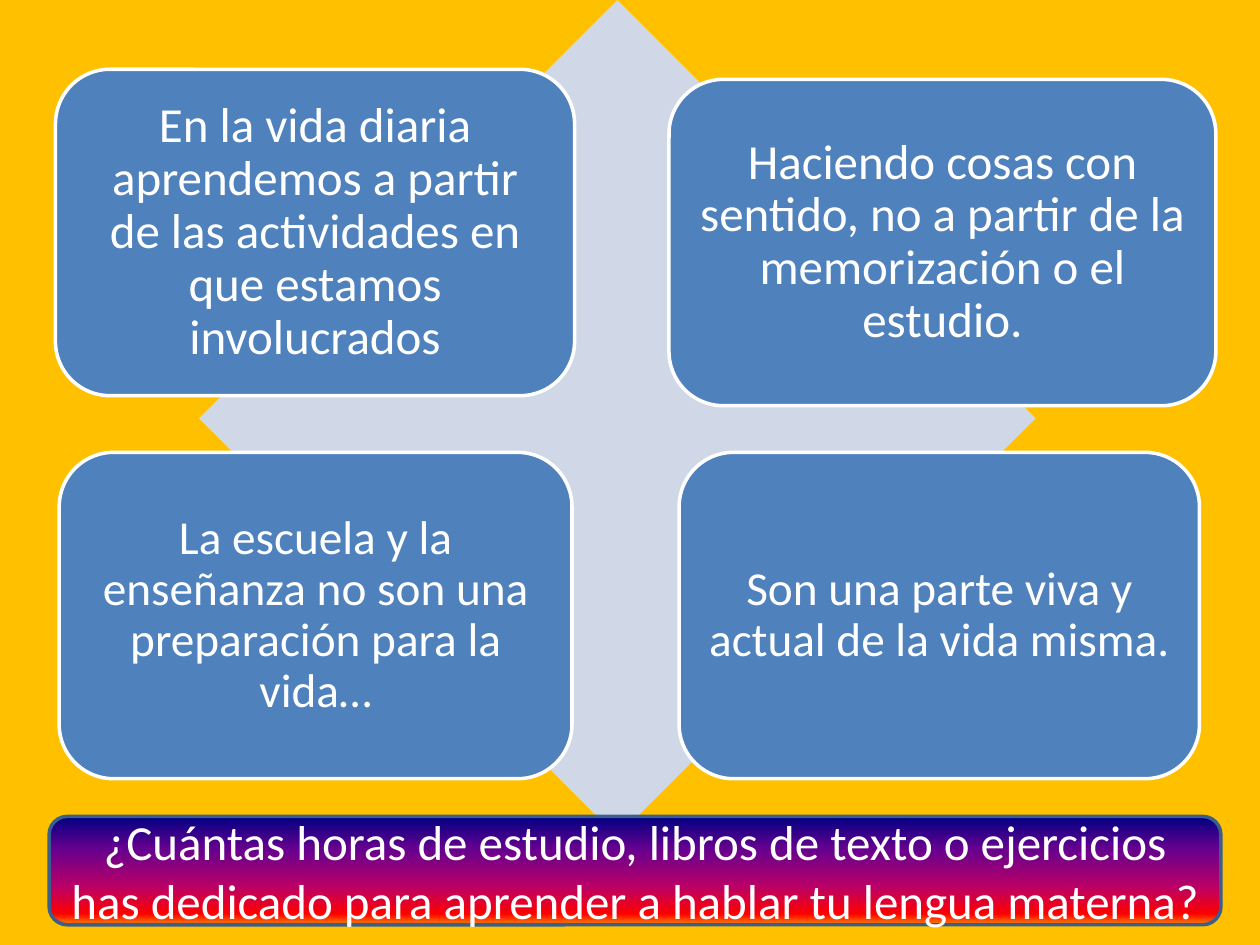
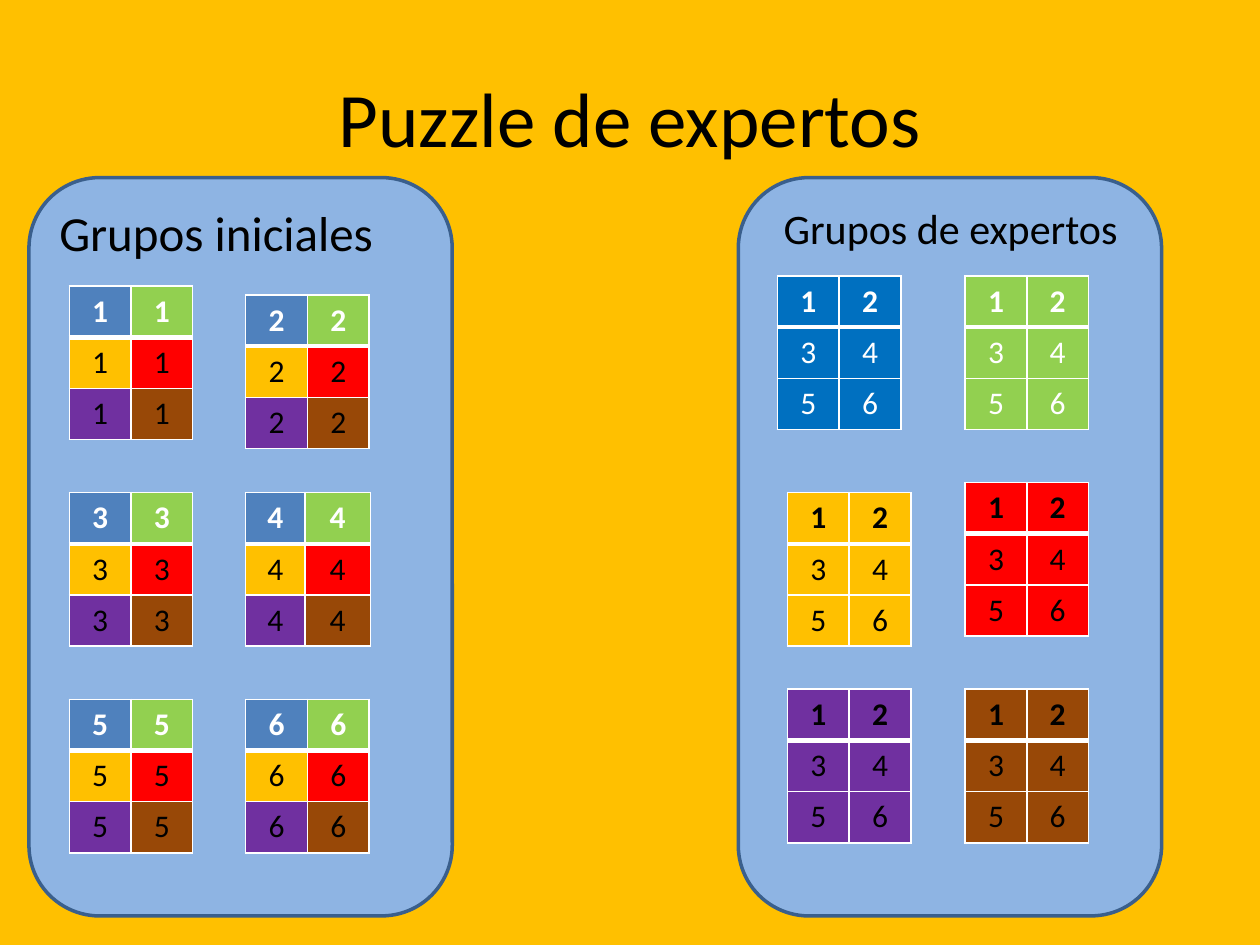
from lxml import etree
from pptx import Presentation
from pptx import util as u
from pptx.dml.color import RGBColor
from pptx.enum import shapes, text
from pptx.oxml import ns

FONT = "Calibri"
COLORS = {
    "background": "FFC000",
    "diamond": "D0D8E8",
    "card": "4F81BD",
    "panel": "8EB4E3",
    "outline": "3A5F8C",
    "white": "FFFFFF",
    "black": "000000",
    "blue": "0070C0",
    "green": "92D050",
    "yellow": "FFC000",
    "red": "FF0000",
    "purple": "7030A0",
    "brown": "984807",
}
BANNER_STOPS = [(0, "000082"), (30, "66008F"), (65, "BA0066"), (90, "FF0000"), (100, "FF8200")]
TITLE_ONLY, BLANK = 5, 6
SHAPE = shapes.MSO_SHAPE


def color(name):
    return RGBColor.from_string(COLORS[name])


def box(left, top, width, height):
    return [u.Inches(length) for length in (left, top, width, height)]


class Deck:
    def __init__(self):
        self.presentation = Presentation()
        self.presentation.slide_width = u.Inches(10)
        self.presentation.slide_height = u.Inches(7.5)
        self.slide = None

    def add_slide(self, layout):
        self.slide = self.presentation.slides.add_slide(self.presentation.slide_layouts[layout])
        fill = self.slide.background.fill
        fill.solid()
        fill.fore_color.rgb = color("background")

    def set_text(self, frame, words, size, ink, bold=False):
        frame.text = words
        paragraph = frame.paragraphs[0]
        paragraph.alignment = text.PP_ALIGN.CENTER
        font = paragraph.runs[0].font
        font.name, font.size, font.bold = FONT, u.Pt(size), bold
        font.color.rgb = color(ink)
        return paragraph

    def title(self, words):
        title = self.slide.shapes.title
        title.left, title.top, title.width, title.height = box(0.5, 0.3, 9, 1.25)
        title.text_frame.vertical_anchor = text.MSO_ANCHOR.MIDDLE
        self.set_text(title.text_frame, words, 44, "black")

    def shape(self, kind, place, fill, line=None):
        shape = self.slide.shapes.add_shape(kind, *box(*place))
        shape.shadow.inherit = False
        shape.fill.solid()
        shape.fill.fore_color.rgb = color(fill)
        if line:
            shape.line.color.rgb = color(line)
            shape.line.width = u.Pt(2)
        else:
            shape.line.fill.background()
        return shape

    def card(self, place, words, size, inset):
        shape = self.shape(SHAPE.ROUNDED_RECTANGLE, place, "card", "white")
        frame = shape.text_frame
        frame.word_wrap = True
        frame.vertical_anchor = text.MSO_ANCHOR.MIDDLE
        frame.margin_left = frame.margin_right = u.Inches(inset)
        frame.margin_top = frame.margin_bottom = u.Inches(inset)
        self.set_text(frame, words, size, "white").line_spacing = 0.9

    def banner(self, place, words):
        shape = self.shape(SHAPE.ROUNDED_RECTANGLE, place, "card", "outline")
        shape.fill.gradient()
        shape.fill.gradient_angle = 270
        stops = shape.element.spPr.find(f".//{ns.qn('a:gsLst')}")
        for stop in list(stops):
            stops.remove(stop)
        for position, value in BANNER_STOPS:
            stop = etree.SubElement(stops, ns.qn("a:gs"), pos=str(position * 1000))
            etree.SubElement(stop, ns.qn("a:srgbClr"), val=value)
        shape.text_frame.word_wrap = True
        shape.text_frame.vertical_anchor = text.MSO_ANCHOR.MIDDLE
        self.set_text(shape.text_frame, words, 28, "white")

    def label(self, place, words, size):
        frame = self.slide.shapes.add_textbox(*box(*place)).text_frame
        frame.word_wrap = True
        frame.auto_size = text.MSO_AUTO_SIZE.SHAPE_TO_FIT_TEXT
        self.set_text(frame, words, size, "black")

    def border(self, cell, row):
        properties = cell._tc.get_or_add_tcPr()
        heavy_side = {0: "lnB", 1: "lnT"}.get(row)
        for side in ("lnL", "lnR", "lnT", "lnB"):
            width = u.Pt(3 if side == heavy_side else 1)
            line = etree.SubElement(properties, ns.qn(f"a:{side}"), w=str(int(width)))
            fill = etree.SubElement(line, ns.qn("a:solidFill"))
            etree.SubElement(fill, ns.qn("a:srgbClr"), val=COLORS["white"])

    def group_table(self, left, top, numbers, fills, inks, widths=(0.49, 0.49)):
        place = box(left, top, sum(widths), 1.22)
        table = self.slide.shapes.add_table(3, 2, *place).table
        table.first_row = table.horz_banding = False
        for column, width in zip(table.columns, widths):
            column.width = u.Inches(width)
        for index, cell in enumerate(table.iter_cells()):
            row = index // 2
            self.border(cell, row)
            cell.fill.solid()
            cell.fill.fore_color.rgb = color(fills[index])
            self.set_text(cell.text_frame, str(numbers[index]), 18, inks[index], row == 0)


def activities_slide(deck):
    deck.add_slide(BLANK)
    deck.shape(SHAPE.DIAMOND, (1.58, 0, 6.64, 6.64), "diamond")
    cards = [
        (0.44, 0.55, 4.12, 28, 0.12,
         "En la vida diaria aprendemos a partir de las actividades en que estamos involucrados"),
        (5.31, 0.63, 4.34, 28, 0.12,
         "Haciendo cosas con sentido, no a partir de la memorización o el estudio."),
        (0.47, 3.59, 4.07, 27, 0.11,
         "La escuela y la enseñanza no son una preparación para la vida…"),
        (5.39, 3.59, 4.13, 27, 0.11, "Son una parte viva y actual de la vida misma."),
    ]
    for left, top, width, size, inset, words in cards:
        deck.card((left, top, width, 2.59), words, size, inset)
    deck.banner(
        (0.39, 6.48, 9.3, 0.86),
        "¿Cuántas horas de estudio, libros de texto o ejercicios "
        "has dedicado para aprender a hablar tu lengua materna?",
    )


def puzzle_slide(deck):
    deck.add_slide(TITLE_ONLY)
    deck.title("Puzzle de expertos")
    for left in (5.86, 0.23):
        deck.shape(SHAPE.ROUNDED_RECTANGLE, (left, 1.41, 3.36, 5.86), "panel", "outline")

    deck.label((0.31, 1.56, 2.81, 0.57), "Grupos iniciales", 28)
    member_fills = ["card", "green", "yellow", "red", "purple", "brown"]
    member_inks = ["white"] * 2 + ["black"] * 4
    for index in range(6):
        group = index + 1
        row, column = divmod(index, 2)
        top = 2.34 if group == 2 else 2.27 + 1.64 * row
        widths = (0.47, 0.52) if group == 4 else (0.49, 0.49)
        deck.group_table(0.55 + 1.4 * column, top, [group] * 6, member_fills, member_inks, widths)

    deck.label((6.02, 1.56, 3.05, 0.5), "Grupos de expertos", 24)
    expert_groups = [
        (6.17, 2.19, "blue", "white"),
        (7.66, 2.19, "green", "white"),
        (6.25, 3.91, "yellow", "black"),
        (7.66, 3.83, "red", "black"),
        (6.25, 5.47, "purple", "black"),
        (7.66, 5.47, "brown", "black"),
    ]
    for left, top, fill, ink in expert_groups:
        deck.group_table(left, top, range(1, 7), [fill] * 6, [ink] * 6)


def main():
    deck = Deck()
    activities_slide(deck)
    puzzle_slide(deck)
    deck.presentation.save("out.pptx")


if __name__ == "__main__":
    main()
